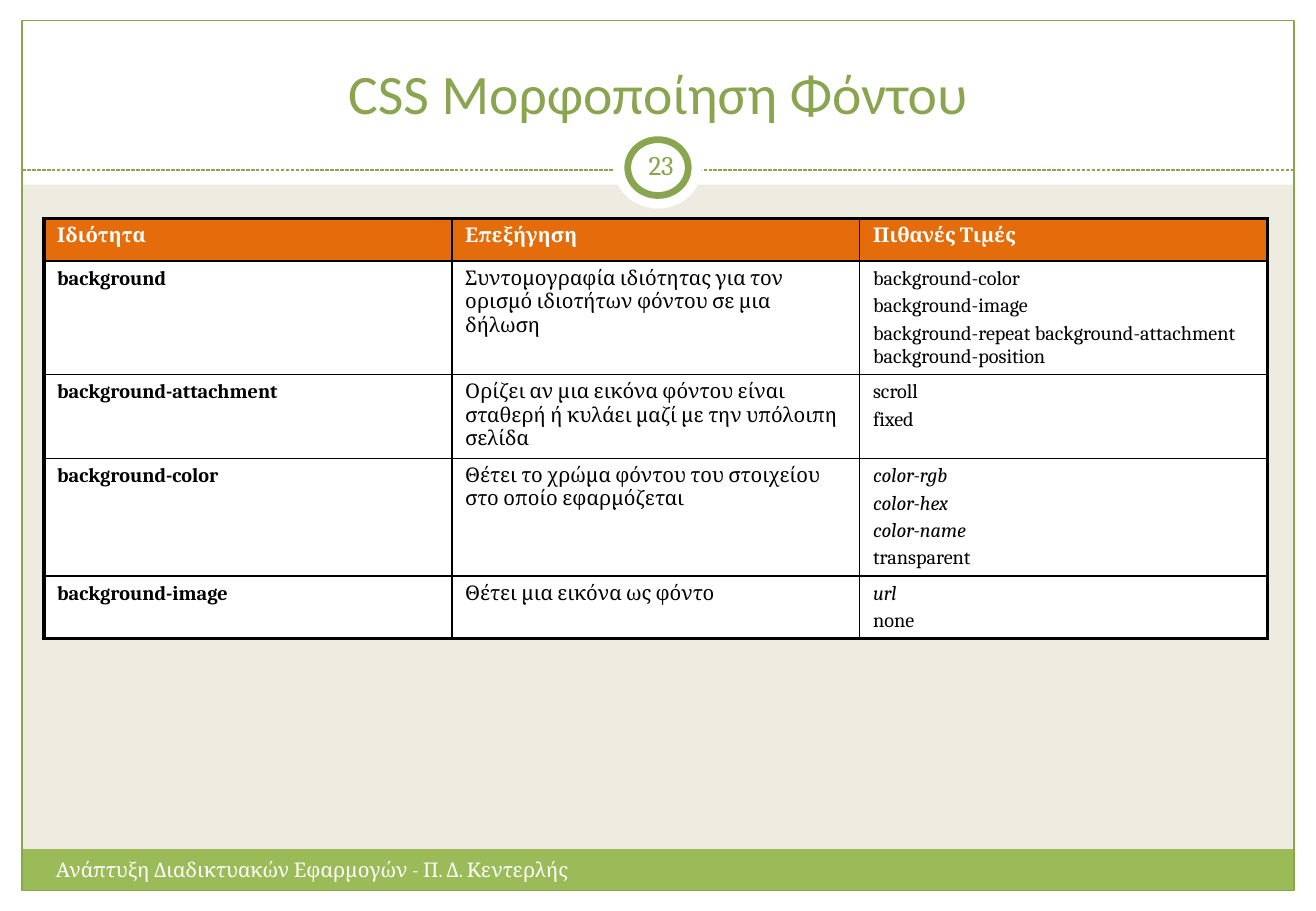
from lxml import etree
from pptx import Presentation
from pptx.dml.color import RGBColor
from pptx.enum.dml import MSO_LINE
from pptx.enum.shapes import MSO_CONNECTOR, MSO_SHAPE
from pptx.enum.text import MSO_ANCHOR, MSO_AUTO_SIZE, PP_ALIGN
from pptx.oxml.ns import qn
from pptx.util import Inches, Pt

RECTANGLE, OVAL = MSO_SHAPE.RECTANGLE, MSO_SHAPE.OVAL
STRAIGHT, DASHED = MSO_CONNECTOR.STRAIGHT, MSO_LINE.SQUARE_DOT
TOP, MIDDLE, BOTTOM = MSO_ANCHOR.TOP, MSO_ANCHOR.MIDDLE, MSO_ANCHOR.BOTTOM
LEFT, CENTER = PP_ALIGN.LEFT, PP_ALIGN.CENTER

WHITE = RGBColor(0xFF, 0xFF, 0xFF)
BLACK = RGBColor(0x00, 0x00, 0x00)
BEIGE = RGBColor(0xEE, 0xEC, 0xE1)
GREEN = RGBColor(0x9B, 0xBB, 0x59)
DARK_GREEN = RGBColor(0x89, 0xA5, 0x4F)
ORANGE = RGBColor(0xE4, 0x6C, 0x0A)
HEADING_FONT, BODY_FONT = "Calibri", "Cambria"

# The slide is a grid of 60 columns and 45 rows
WIDTH, HEIGHT = Inches(10.83), Inches(7.5)
COLUMNS, ROWS = 60, 45

HEADER = ["Ιδιότητα", "Επεξήγηση", "Πιθανές Τιμές"]
# Property, explanation, possible values; placeholder values are italic
PROPERTIES = [
    ("background",
     "Συντομογραφία ιδιότητας για τον ορισμό ιδιοτήτων φόντου σε μια δήλωση",
     ["background-color", "background-image",
      "background-repeat background-attachment background-position"]),
    ("background-attachment",
     "Ορίζει αν μια εικόνα φόντου είναι σταθερή ή κυλάει μαζί με την υπόλοιπη σελίδα",
     ["scroll", "fixed"]),
    ("background-color",
     "Θέτει το χρώμα φόντου του στοιχείου στο οποίο εφαρμόζεται",
     ["color-rgb", "color-hex", "color-name", "transparent"]),
    ("background-image", "Θέτει μια εικόνα ως φόντο", ["url", "none"]),
]
ITALIC_VALUES = {"color-rgb", "color-hex", "color-name", "url"}
TABLE_COLUMN = 18.6
TABLE_ROWS = [2.1, 5.58, 4.14, 5.76, 3.06]
OUTER_BORDER, INNER_BORDER = Pt(2.25), Pt(1)


def across(columns):
    return round(WIDTH * columns / COLUMNS)


def down(rows):
    return round(HEIGHT * rows / ROWS)


def place(left, top, width, height):
    return across(left), down(top), across(width), down(height)


def add_block(slide, kind, area, fill=None, line=None, line_width=0.75):
    block = slide.shapes.add_shape(kind, *place(*area))
    block.shadow.inherit = False
    if fill is None:
        block.fill.background()
    else:
        block.fill.solid()
        block.fill.fore_color.rgb = fill
    if line is None:
        block.line.fill.background()
    else:
        block.line.color.rgb = line
        block.line.width = Pt(line_width)


def add_divider(slide, left, right, row):
    divider = slide.shapes.add_connector(
        STRAIGHT, across(left), down(row), across(right), down(row))
    divider.line.color.rgb = DARK_GREEN
    divider.line.width = Pt(0.75)
    divider.line.dash_style = DASHED
    etree.SubElement(divider.element.spPr, qn("a:effectLst"))


def style(paragraph, size, color, font=BODY_FONT, bold=False, italic=False):
    paragraph.font.size = Pt(size)
    paragraph.font.name = font
    paragraph.font.color.rgb = color
    paragraph.font.bold = bold
    paragraph.font.italic = italic


def set_text(frame, text, size, color, font=BODY_FONT, align=LEFT, anchor=TOP):
    frame.word_wrap = True
    frame.auto_size = MSO_AUTO_SIZE.NONE
    frame.vertical_anchor = anchor
    frame.text = text
    frame.paragraphs[0].alignment = align
    style(frame.paragraphs[0], size, color, font)


def add_label(slide, area, text, size, color, **layout):
    label = slide.shapes.add_textbox(*place(*area))
    set_text(label.text_frame, text, size, color, **layout)
    return label.text_frame


def set_borders(cell, row, column, last_row, last_column):
    outer_sides = {"a:lnL": column == 0, "a:lnR": column == last_column,
                   "a:lnT": row == 0, "a:lnB": row == last_row}
    properties = cell._tc.get_or_add_tcPr()
    for side, is_outer in outer_sides.items():
        width = OUTER_BORDER if is_outer else INNER_BORDER
        border = etree.SubElement(properties, qn(side), w=str(width))
        paint = etree.SubElement(border, qn("a:solidFill"))
        etree.SubElement(paint, qn("a:srgbClr"), val=str(BLACK))


def fill_cell(cell, lines, fill, color, bold):
    cell.margin_left = cell.margin_right = Inches(0.11)
    cell.margin_top = cell.margin_bottom = Inches(0.05)
    cell.fill.solid()
    cell.fill.fore_color.rgb = fill
    cell.text_frame.text = "\n".join(lines)
    for paragraph in cell.text_frame.paragraphs:
        paragraph.space_before = Pt(2.4)
        style(paragraph, 12, color, bold=bold,
              italic=paragraph.text in ITALIC_VALUES)


def add_property_table(slide):
    contents = [[[heading] for heading in HEADER]]
    contents += [[[name], [meaning], values] for name, meaning, values in PROPERTIES]
    area = place(2, 10.8, TABLE_COLUMN * len(HEADER), sum(TABLE_ROWS))
    table = slide.shapes.add_table(len(contents), len(HEADER), *area).table
    for table_column in table.columns:
        table_column.width = across(TABLE_COLUMN)
    for row, cells in enumerate(contents):
        table.rows[row].height = down(TABLE_ROWS[row])
        is_header = row == 0
        for column, lines in enumerate(cells):
            cell = table.cell(row, column)
            set_borders(cell, row, column, len(contents) - 1, len(HEADER) - 1)
            fill_cell(cell, lines, ORANGE if is_header else WHITE,
                      WHITE if is_header else BLACK, is_header or column == 0)


def add_title(slide, text):
    title = slide.shapes.title
    title.left, title.top, title.width, title.height = place(2, 1.5, 56, 5)
    set_text(title.text_frame, text, 33, DARK_GREEN, HEADING_FONT, CENTER, BOTTOM)
    # Bring the title in front of the white bands
    title.element.getparent().append(title.element)


def main():
    deck = Presentation()
    deck.slide_width, deck.slide_height = WIDTH, HEIGHT
    slide = deck.slides.add_slide(deck.slide_layouts[5])
    slide.background.fill.solid()
    slide.background.fill.fore_color.rgb = BEIGE

    # White margins: bottom, top, left, right
    for margin in [(0, 44, 60, 1), (0, 0, 60, 9.12), (0, 0, 1, 45), (59, 0, 1, 45)]:
        add_block(slide, RECTANGLE, margin, fill=WHITE)

    # Footer band, frame and divider
    add_block(slide, RECTANGLE, (1, 41.94, 58, 2.06), fill=GREEN)
    add_block(slide, RECTANGLE, (1, 1, 58, 43), line=DARK_GREEN)
    add_divider(slide, 1, 59, 8.4)

    # Slide number badge
    add_block(slide, OVAL, (28, 6.3, 4, 4), fill=WHITE)
    add_block(slide, OVAL, (28.62, 6.9, 2.76, 2.76), WHITE, DARK_GREEN, 4)

    # Texts
    add_title(slide, "CSS Μορφοποίηση Φόντου")
    add_label(slide, (2, 42.06, 28, 2.4),
              "Ανάπτυξη Διαδικτυακών Εφαρμογών - Π. Δ. Κεντερλής", 12, WHITE)
    number = add_label(slide, (28.64, 6.72, 3, 2.88), "23", 16, DARK_GREEN,
                       align=CENTER, anchor=MIDDLE)
    number.margin_left = number.margin_right = Inches(0.05)

    add_property_table(slide)
    deck.save("out.pptx")


if __name__ == "__main__":
    main()
